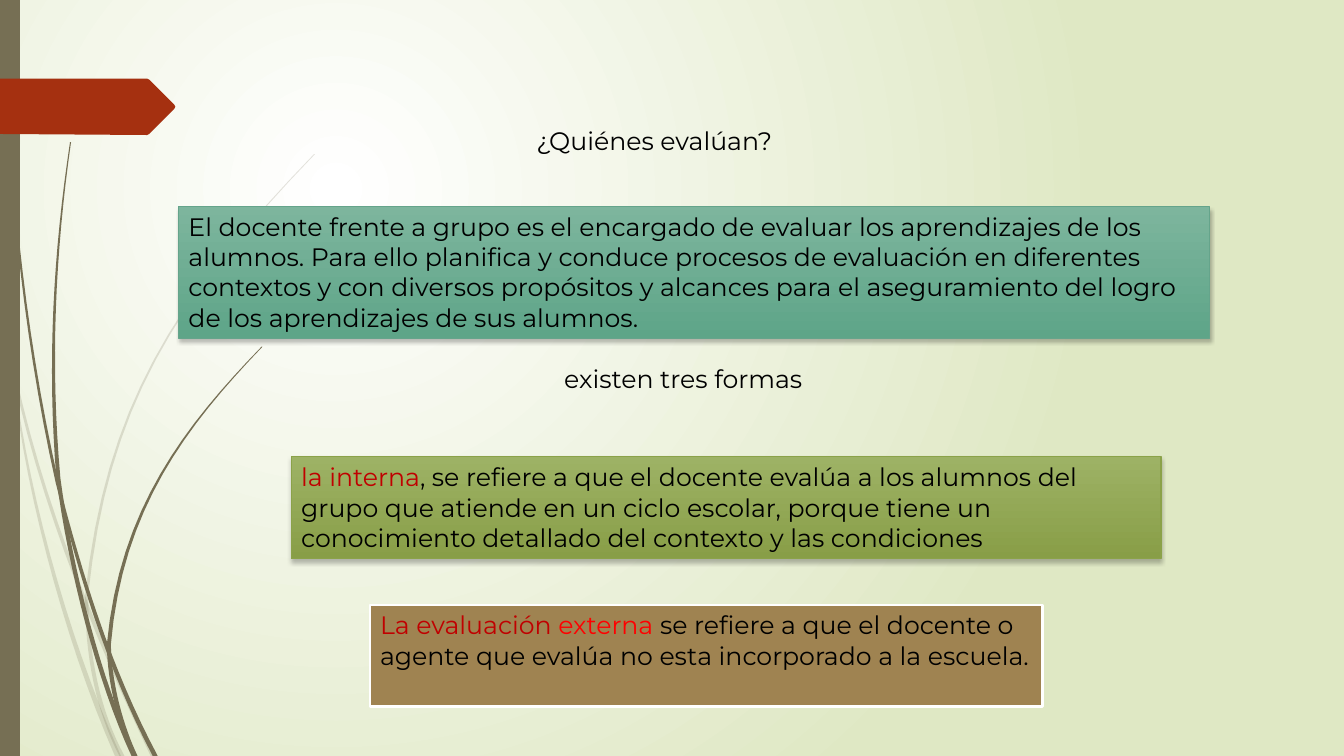
import pptx
import pptx.util
import pptx.dml.color
import pptx.enum.shapes
import pptx.enum.text
import pptx.oxml
import pptx.oxml.ns
from pptx.util import Cm

INCH = 2.54
STEPS = 16
BROWN = "766F54"
BLACK = "000000"
DARK_RED = "C00000"
NAMESPACE = pptx.oxml.ns.nsdecls("a")
qn = pptx.oxml.ns.qn


def rgb(code):
    return pptx.dml.color.RGBColor.from_string(code)


def draw_outline(shapes, points, code):
    corners = [(Cm(x * INCH), Cm(y * INCH)) for x, y in points]
    builder = shapes.build_freeform(*corners[0])
    builder.add_line_segments(corners[1:], close=True)
    outline = builder.convert_to_shape()
    outline.fill.solid()
    outline.fill.fore_color.rgb = rgb(code)
    outline.line.fill.background()
    outline.shadow.inherit = False
    return outline


pale_blades = [
    ((0, 2.85), (.18, 4.39), (.79, 5.97), (1.52, 7.5), .02, .05),
    ((.11, 3.5), (.21, 4.69), (.64, 6.31), (1.17, 7.5), .01, .06),
    ((3.12, 1.53), (1.71, 2.99), (1.06, 4.05), (.86, 5.9), .01, .03),
    ((.86, 5.9), (.86, 6.5), (.97, 7.05), (1.21, 7.5), .03, .05),
]
dark_blades = [
    ((.04, 0), (.07, 1.6), (.21, 3.2), (.57, 4.8), .01, .03),
    ((.57, 4.8), (.8, 5.7), (1.07, 6.61), (1.54, 7.5), .03, .05),
    ((.7, 1.41), (.54, 2.5), (.48, 3.6), (.58, 4.75), .01, .04),
    ((.58, 4.75), (.7, 5.65), (.98, 6.75), (1.33, 7.5), .04, .05),
    ((2.6, 3.44), (1.85, 4.22), (1.2, 5.04), (1.08, 6.4), .01, .04),
    ((1.08, 6.4), (1.09, 6.8), (1.2, 7.2), (1.34, 7.5), .04, .05),
]

presentation = pptx.Presentation()
presentation.slide_width = Cm(33.87)
presentation.slide_height = Cm(19.05)
slide = presentation.slides.add_slide(presentation.slide_layouts[5])

backdrop = slide.background.fill
backdrop.gradient()
for stop, code in zip(backdrop.gradient_stops, ("FFFFFF", "DFE8C4")):
    stop.color.rgb = rgb(code)
linear = next(slide.element.iter(qn("a:lin")))
linear.getparent().replace(linear, pptx.oxml.parse_xml(
    f'<a:path {NAMESPACE} path="circle"><a:fillToRect l="50000" t="50000" r="100000" b="100000"/></a:path>'))

for blades, opacity in ((pale_blades, 20), (dark_blades, 100)):
    plant = slide.shapes.add_group_shape()
    for *nodes, tip_width, root_width in blades:
        left_edge, right_edge = [], []
        for step in range(STEPS + 1):
            t = step / STEPS
            weights = ((1 - t) ** 3, 3 * t * (1 - t) ** 2, 3 * t * t * (1 - t), t ** 3)
            x, y = [sum(w * node[axis] for w, node in zip(weights, nodes)) for axis in (0, 1)]
            half = (tip_width + (root_width - tip_width) * t) / 2
            left_edge.append((x - half, y))
            right_edge.append((x + half, y))
        blade = draw_outline(plant.shapes, left_edge + right_edge[::-1], BROWN)
        if opacity < 100:
            tint = next(blade.element.spPr.iter(qn("a:srgbClr")))
            tint.append(pptx.oxml.parse_xml(f'<a:alpha {NAMESPACE} val="{opacity * 1000}"/>'))

side_band = slide.shapes.add_shape(pptx.enum.shapes.MSO_SHAPE.RECTANGLE, 0, 0, Cm(0.5), Cm(19.05))
side_band.fill.solid()
side_band.fill.fore_color.rgb = rgb(BROWN)
side_band.line.fill.background()
side_band.shadow.inherit = False

draw_outline(slide.shapes, [(0, .78), (1.46, .78), (1.48, .79), (1.73, 1.04), (1.74, 1.06),
                            (1.73, 1.08), (1.48, 1.33), (1.46, 1.34), (0, 1.33)], "A53010")

question = slide.shapes.title
question.left, question.top, question.width, question.height = Cm(13.26), Cm(3.02), Cm(7.09), Cm(1.03)
forms = slide.shapes.add_textbox(Cm(13.97), Cm(9.02), Cm(7.37), Cm(1.03))
passages = [
    (question, [("¿Quiénes evalúan?", BLACK)]),
    (forms, [("existen tres formas", BLACK)]),
]

panels = [
    ((4.5, 5.2, 25.98, 3.33), ("7DB59D", "5EA588"), "65A48B", 0.75, [
        ("El docente frente a grupo es el encargado de evaluar los aprendizajes de los alumnos. Para ello planifica "
         "y conduce procesos de evaluación en diferentes contextos y con diversos propósitos y alcances para el "
         "aseguramiento del logro de los aprendizajes de sus alumnos.", BLACK)]),
    ((7.34, 11.51, 21.92, 2.57), ("9DB265", "889E47"), "8BA249", 0.75, [
        ("la interna", DARK_RED),
        (", se refiere a que el docente evalúa a los alumnos del grupo que atiende en un ciclo escolar, "
         "porque tiene un conocimiento detallado del contexto y las condiciones", BLACK)]),
    ((9.33, 15.24, 16.94, 2.57), ("9F8351",), "FFFFFF", 1.75, [
        ("La evaluación ", DARK_RED), ("externa ", "FF0000"),
        ("se refiere a que el docente o agente que evalúa no esta incorporado a la escuela.", BLACK)]),
]
for place, fills, border, weight, pieces in panels:
    panel = slide.shapes.add_shape(pptx.enum.shapes.MSO_SHAPE.RECTANGLE, *map(Cm, place))
    panel.shadow.inherit = False
    panel.line.color.rgb = rgb(border)
    panel.line.width = pptx.util.Pt(weight)
    if len(fills) == 2:
        panel.fill.gradient()
        panel.fill.gradient_angle = 270
        for stop, code in zip(panel.fill.gradient_stops, fills):
            stop.color.rgb = rgb(code)
        panel.element.spPr.find(qn("a:effectLst")).append(pptx.oxml.parse_xml(
            f'<a:outerShdw {NAMESPACE} blurRad="38100" dist="25400" dir="5400000" rotWithShape="0">'
            '<a:srgbClr val="000000"><a:alpha val="25000"/></a:srgbClr></a:outerShdw>'))
    else:
        panel.fill.solid()
        panel.fill.fore_color.rgb = rgb(fills[0])
    passages.append((panel, pieces))

for holder, pieces in passages:
    frame = holder.text_frame
    frame.word_wrap = holder not in (question, forms)
    frame.auto_size = pptx.enum.text.MSO_AUTO_SIZE.NONE
    frame.vertical_anchor = pptx.enum.text.MSO_ANCHOR.TOP
    paragraph = frame.paragraphs[0]
    paragraph.alignment = pptx.enum.text.PP_ALIGN.LEFT
    for wording, code in pieces:
        run = paragraph.add_run()
        run.text = wording
        run.font.name = "Montserrat"
        run.font.size = pptx.util.Pt(18)
        run.font.color.rgb = rgb(code)

presentation.save("out.pptx")
